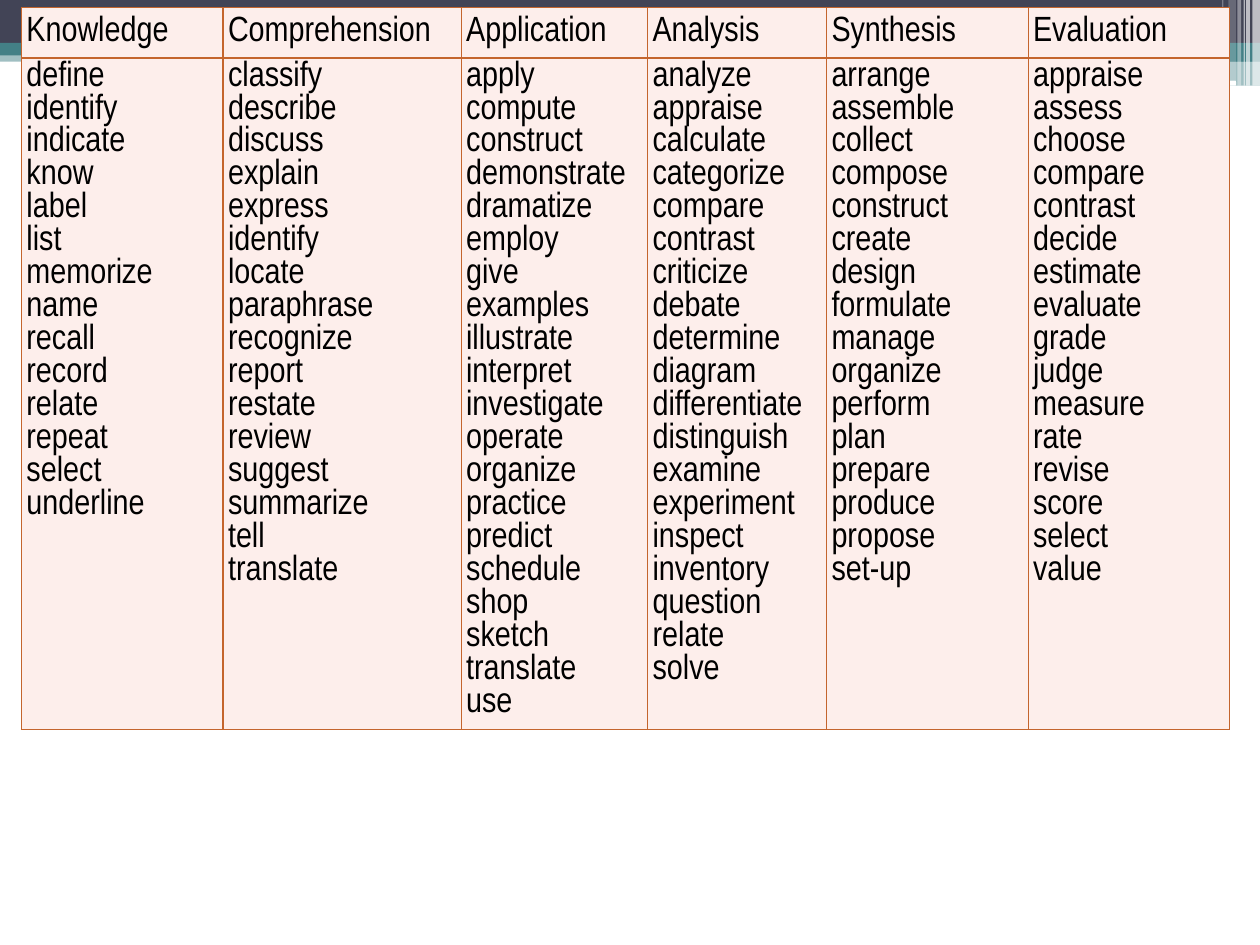
import pptx
import pptx.util
import pptx.dml.color
import pptx.enum.shapes
import pptx.enum.text
import pptx.oxml
import pptx.oxml.ns
from lxml import etree

Inches = pptx.util.Inches
SHAPE = pptx.enum.shapes.MSO_SHAPE
ANCHOR = pptx.enum.text.MSO_ANCHOR
qn = pptx.oxml.ns.qn


def paint(fill, color, alpha=100):
    fill.solid()
    fill.fore_color.rgb = pptx.dml.color.RGBColor.from_string(color)
    if alpha < 100:
        clr = fill._xPr.find(qn("a:solidFill"))[0]
        etree.SubElement(clr, qn("a:alpha"), val=str(alpha * 1000))


def write(tf, text, size=20, font="Arial Narrow", color="000000"):
    for i, line in enumerate(text.split("\n")):
        p = tf.paragraphs[0] if i == 0 else tf.add_paragraph()
        r = p.add_run()
        r.text = line
        r.font.size = pptx.util.Pt(size)
        r.font.name = font
        paint(r.font.fill, color)


prs = pptx.Presentation()
prs.slide_width, prs.slide_height = Inches(10), Inches(7.5)
s = prs.slides.add_slide(prs.slide_layouts[6])

NAVY, TEAL, WHITE = "424456", "438086", "FFFFFF"
bands = [
    (SHAPE.RECTANGLE, 0, 0.4, 10, 0.09, TEAL, 50),
    (SHAPE.RECTANGLE, 0, 0, 10, 0.34, NAVY, 100),
    (SHAPE.RECTANGLE, 0, 0.34, 10, 0.1, TEAL, 100),
    (SHAPE.RECTANGLE, 5.92, 0.39, 4.08, 0.1, TEAL, 100),
    (SHAPE.RECTANGLE, 5.92, 0.48, 4.08, 0.2, TEAL, 50),
    (SHAPE.ROUNDED_RECTANGLE, 5.91, 0.54, 3.35, 0.03, WHITE, 100),
    (SHAPE.ROUNDED_RECTANGLE, 8.06, 0.64, 1.75, 0.04, WHITE, 100),
]
stripes = [
    (9.94, 0.06, 0.68, 65),
    (9.89, 0.03, 0.68, 65),
    (9.87, 0.01, 0.68, 60),
    (9.82, 0.03, 0.68, 40),
    (9.75, 0.06, 0.64, 20),
    (9.7, 0.01, 0.64, 30),
]
bands += [(SHAPE.RECTANGLE, x, 0, w, h, WHITE, a) for x, w, h, a in stripes]
for kind, x, y, w, h, color, alpha in bands:
    sp = s.shapes.add_shape(kind, Inches(x), Inches(y), Inches(w), Inches(h))
    sp.shadow.inherit = False
    sp.line.fill.background()
    paint(sp.fill, color, alpha)

columns = [
    ("Knowledge", 1.6, "define identify indicate know label list memorize name recall "
     "record relate repeat select underline"),
    ("Comprehension", 1.89, "classify describe discuss explain express identify locate "
     "paraphrase recognize report restate review suggest summarize tell translate"),
    ("Application", 1.48, "apply compute construct demonstrate dramatize employ "
     "give_examples illustrate interpret investigate operate organize practice "
     "predict schedule shop sketch translate use"),
    ("Analysis", 1.42, "analyze appraise calculate categorize compare contrast criticize "
     "debate determine diagram differentiate distinguish examine experiment inspect "
     "inventory question relate solve"),
    ("Synthesis", 1.6, "arrange assemble collect compose construct create design "
     "formulate manage organize perform plan prepare produce propose set-up"),
    ("Evaluation", 1.6, "appraise assess choose compare contrast decide estimate "
     "evaluate grade judge measure rate revise score select value"),
]
row_heights = [0.4, 5.33]
width = sum(w for _, w, _ in columns)
frame = s.shapes.add_table(2, len(columns), Inches(0.17), Inches(0.06),
                           Inches(width), Inches(sum(row_heights)))
table = frame.table
table.first_row = table.horz_banding = False
for row, h in zip(table.rows, row_heights):
    row.height = Inches(h)

for c, (heading, w, verbs) in enumerate(columns):
    table.columns[c].width = Inches(w)
    body = verbs.replace(" ", "\n").replace("_", " ")
    for r, (text, anchor) in enumerate([(heading, ANCHOR.MIDDLE), (body, ANCHOR.TOP)]):
        cell = table.cell(r, c)
        cell.vertical_anchor = anchor
        cell.margin_left = cell.margin_right = Inches(0.04)
        cell.margin_top = cell.margin_bottom = Inches(0.02)
        write(cell.text_frame, text)
        tcPr = cell._tc.get_or_add_tcPr()
        for side in ("a:lnL", "a:lnR", "a:lnT", "a:lnB"):
            ln = etree.SubElement(tcPr, qn(side), w=str(pptx.util.Pt(0.75)))
            solid = etree.SubElement(ln, qn("a:solidFill"))
            etree.SubElement(solid, qn("a:srgbClr"), val="C4652D")
        paint(cell.fill, "FDEEEB")

prs.save("out.pptx")
